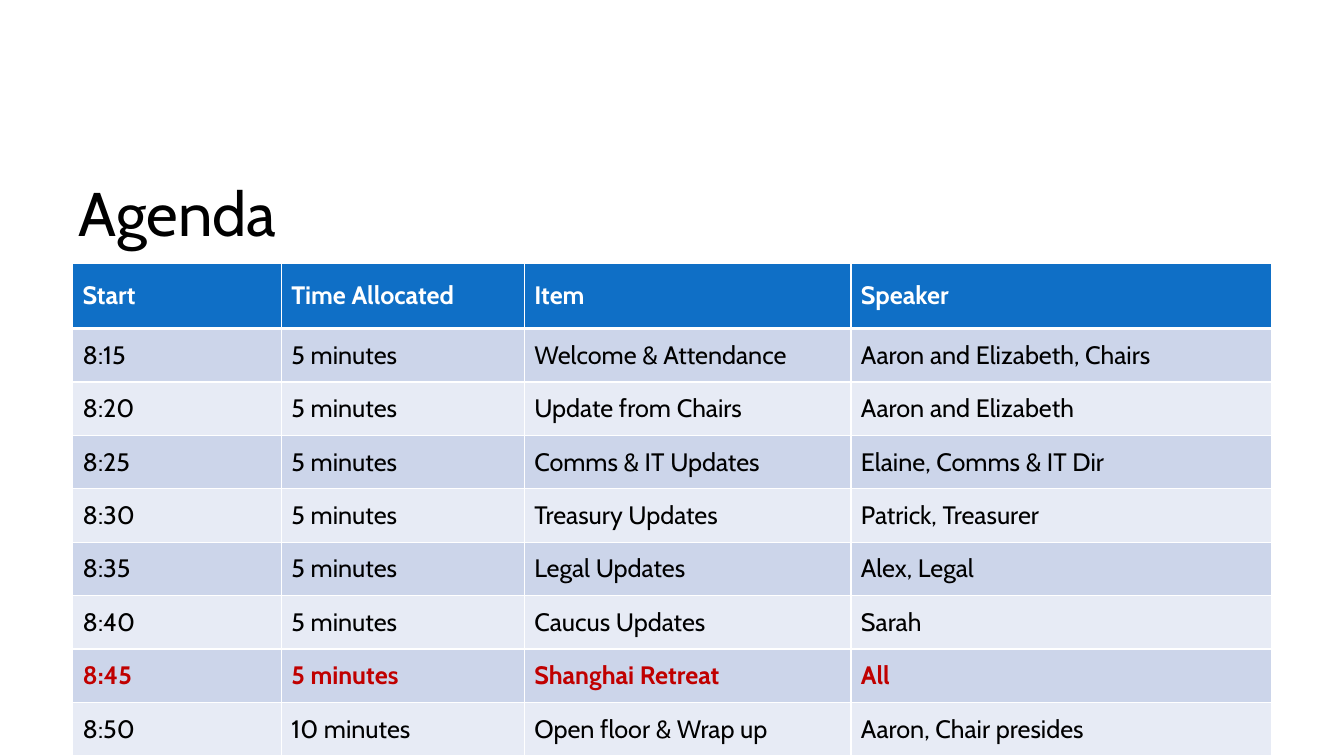
from dataclasses import dataclass

from lxml import etree
from pptx import Presentation
from pptx import util as u
from pptx.dml.color import RGBColor
from pptx.enum import text
from pptx.oxml import ns


@dataclass(frozen=True)
class Theme:
    font: str = "Cabin"
    title_size: int = 44
    table_size: int = 18
    ink: str = "000000"
    white: str = "FFFFFF"
    accent: str = "C00000"
    header: str = "0F6FC6"
    bands: tuple[str, str] = ("CCD5EA", "E7EBF5")


@dataclass(frozen=True)
class AgendaItem:
    start: str
    time: str
    item: str
    speaker: str
    highlight: bool = False


THEME = Theme()
HEADINGS = AgendaItem("Start", "Time Allocated", "Item", "Speaker")
AGENDA = [
    AgendaItem("8:15", "5 minutes", "Welcome & Attendance", "Aaron and Elizabeth, Chairs"),
    AgendaItem("8:20", "5 minutes", "Update from Chairs", "Aaron and Elizabeth"),
    AgendaItem("8:25", "5 minutes", "Comms & IT Updates", "Elaine, Comms & IT Dir"),
    AgendaItem("8:30", "5 minutes", "Treasury Updates", "Patrick, Treasurer"),
    AgendaItem("8:35", "5 minutes", "Legal Updates", "Alex, Legal"),
    AgendaItem("8:40", "5 minutes", "Caucus Updates", "Sarah"),
    AgendaItem("8:45", "5 minutes", "Shanghai Retreat", "All", highlight=True),
    AgendaItem("8:50", "10 minutes", "Open floor & Wrap up", "Aaron, Chair presides"),
]
COLUMN_WIDTHS = (2.07, 2.41, 3.24, 4.17)
HEADER_HEIGHT, ROW_HEIGHT = 0.65, 0.53


def write(frame, words: str, *, size: int, color: str, bold: bool = False,
          line_spacing: float = 1.0) -> None:
    para = frame.paragraphs[0]
    para.alignment = text.PP_ALIGN.LEFT
    para.line_spacing = line_spacing
    span = para.add_run()
    span.text = words
    span.font.name = THEME.font
    span.font.size = u.Pt(size)
    span.font.bold = bold
    span.font.color.rgb = RGBColor.from_string(color)


def set_borders(cell, top: float, bottom: float) -> None:
    properties = cell._tc.get_or_add_tcPr()
    for side, width in (("L", 1), ("R", 1), ("T", top), ("B", bottom)):
        line = etree.SubElement(properties, ns.qn(f"a:ln{side}"), w=str(u.Pt(width)))
        fill = etree.SubElement(line, ns.qn("a:solidFill"))
        etree.SubElement(fill, ns.qn("a:srgbClr"), val=THEME.white)


def add_title(page) -> None:
    box = page.shapes.title
    box.left, box.top = u.Inches(0.68), u.Inches(1.42)
    box.width, box.height = u.Inches(10.41), u.Inches(1.45)
    box.text_frame.vertical_anchor = text.MSO_ANCHOR.MIDDLE
    write(box.text_frame, "Agenda", size=THEME.title_size, color=THEME.ink, line_spacing=0.9)


def add_agenda(page) -> None:
    rows = [HEADINGS, *AGENDA]
    table = page.shapes.add_table(
        len(rows), len(COLUMN_WIDTHS), u.Inches(0.72), u.Inches(2.61),
        u.Inches(sum(COLUMN_WIDTHS)), u.Inches(HEADER_HEIGHT + ROW_HEIGHT * len(AGENDA)),
    ).table
    for column, width in zip(table.columns, COLUMN_WIDTHS):
        column.width = u.Inches(width)
    for index, entry in enumerate(rows):
        is_header = index == 0
        table.rows[index].height = u.Inches(HEADER_HEIGHT if is_header else ROW_HEIGHT)
        fill = THEME.header if is_header else THEME.bands[(index - 1) % 2]
        color = THEME.white if is_header else THEME.accent if entry.highlight else THEME.ink
        words = (entry.start, entry.time, entry.item, entry.speaker)
        for cell, value in zip(table.rows[index].cells, words):
            set_borders(cell, top=3 if index == 1 else 1, bottom=3 if is_header else 1)
            cell.fill.solid()
            cell.fill.fore_color.rgb = RGBColor.from_string(fill)
            cell.vertical_anchor = text.MSO_ANCHOR.MIDDLE
            write(cell.text_frame, value, size=THEME.table_size, color=color,
                  bold=is_header or entry.highlight)


def main() -> None:
    deck = Presentation()
    deck.slide_width, deck.slide_height = u.Inches(13.33), u.Inches(7.5)
    page = deck.slides.add_slide(deck.slide_layouts.get_by_name("Title Only"))
    add_title(page)
    add_agenda(page)
    deck.save("out.pptx")


if __name__ == "__main__":
    main()
